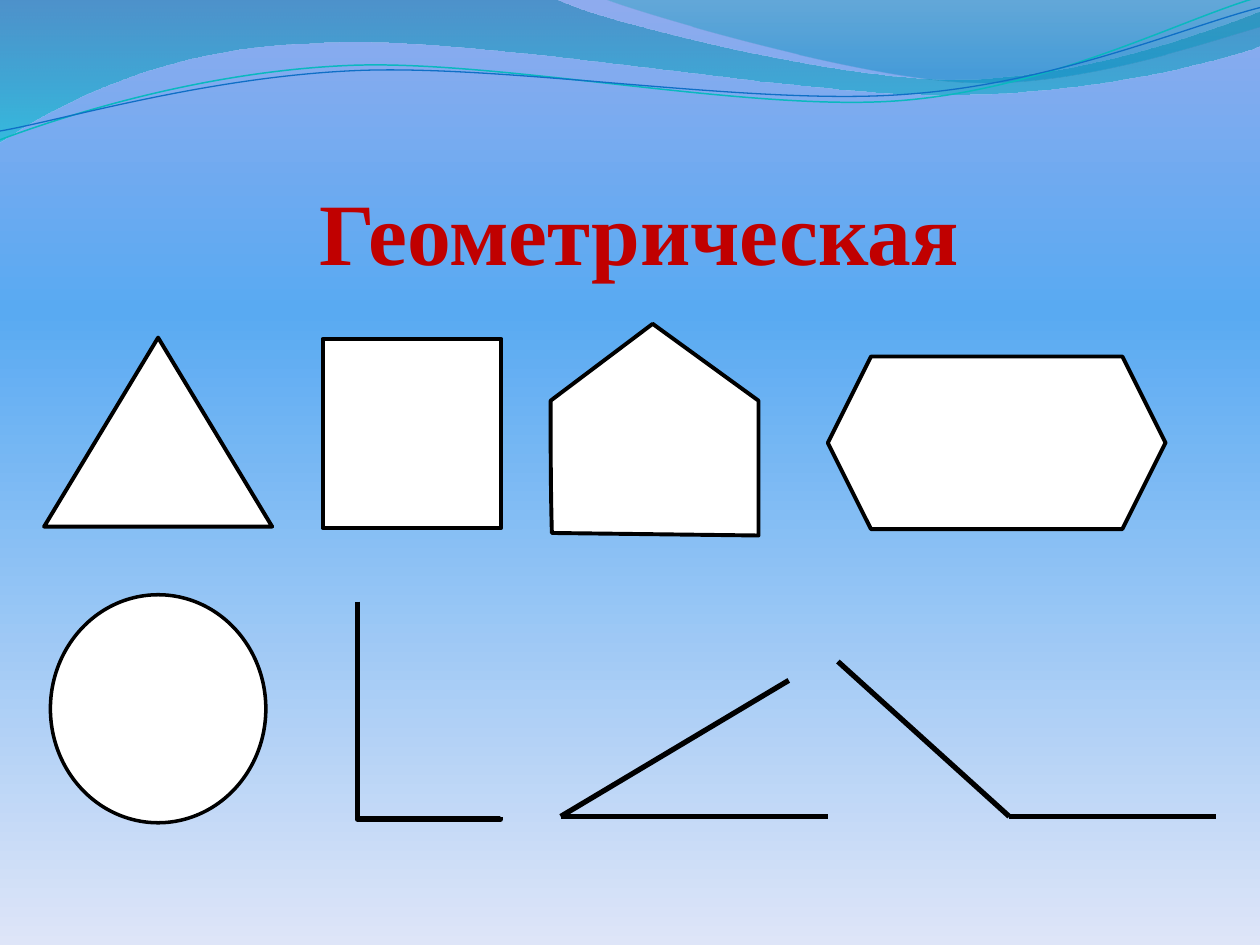
import math

from lxml import etree
from pptx import Presentation
from pptx.dml.color import RGBColor
from pptx.enum import shapes, text
from pptx.oxml.ns import qn
from pptx.util import Inches, Pt

BLACK = RGBColor(0x00, 0x00, 0x00)
WHITE = RGBColor(0xFF, 0xFF, 0xFF)
RED = RGBColor(0xC0, 0x00, 0x00)
TEAL = RGBColor(0x0A, 0xB8, 0xBF)
BLUE = RGBColor(0x0F, 0x6F, 0xC6)

TITLE = "Геометрическая"

# Gradient stops: position %, colour, opacity %
SKY = [(0, RGBColor(0x8E, 0xAB, 0xEE), 100),
       (33, RGBColor(0x59, 0xAA, 0xF2), 100),
       (100, RGBColor(0xDE, 0xE5, 0xF8), 100)]
WIDE_BAND = [(0, RGBColor(0x00, 0x74, 0xA1), 45),
             (100, RGBColor(0x00, 0xC6, 0xCF), 55)]
RIGHT_BAND = [(0, RGBColor(0x00, 0xA1, 0xA9), 30),
              (80, RGBColor(0x00, 0x8B, 0xBF), 45)]

# Box, then outline: a start point, then (x, y) for a line
# or six numbers for a Bezier curve
BANDS = [
    (WIDE_BAND, (-0.01, -0.01, 10.02, 1.14),
     [(0, 0), (4.4, -0.01),
      (4.76, 0.17, 6.64, 0.63, 7.58, 0.63),
      (8.53, 0.63, 9.58, 0.26, 10, 0.09),
      (10.01, 0.36),
      (9.83, 0.44, 8.7, 0.76, 7.46, 0.75),
      (6.22, 0.75, 3.82, 0.28, 2.57, 0.34),
      (1.29, 0.36, 0.46, 0.83, -0.01, 1.13)]),
    (RIGHT_BAND, (4.79, -0.01, 5.21, 0.7),
     [(4.79, -0.01),
      (5.09, 0.11, 6.82, 0.62, 7.69, 0.65),
      (8.56, 0.69, 9.61, 0.32, 10, 0.21),
      (10, 0)]),
]
WAVE_TILT = -2.7
WAVES = [
    (TEAL, 0.85, (-0.02, 0.22, 10.02, 0.71),
     [(0, 1.11),
      (0.48, 0.93, 1.58, 0.57, 2.77, 0.52),
      (3.95, 0.47, 5.93, 0.89, 7.13, 0.8),
      (8.33, 0.71, 9.38, 0.15, 9.98, -0.02)]),
    (BLUE, 0.75, (-0.02, 0.3, 10.03, 0.58),
     [(0, 1.04),
      (0.47, 0.96, 1.64, 0.61, 2.83, 0.56),
      (4.03, 0.51, 5.97, 0.84, 7.17, 0.75),
      (8.36, 0.67, 9.41, 0.21, 10, 0.06)]),
]
HOUSE_BOX = (4.37, 2.57, 1.65, 1.68)
HOUSE = [(4.37, 3.18), (5.18, 2.57), (6.02, 3.18),
         (6.02, 3.54, 6.02, 3.89, 6.02, 4.25), (4.38, 4.23),
         (4.37, 3.88, 4.37, 3.53, 4.37, 3.18)]

KIND = shapes.MSO_SHAPE
TRIANGLE = (KIND.ISOSCELES_TRIANGLE, (0.35, 2.68, 1.81, 1.5), 2.25)
SQUARE = (KIND.RECTANGLE, (2.56, 2.69, 1.42, 1.5), 2.25)
CIRCLE = (KIND.OVAL, (0.4, 4.72, 1.71, 1.81), 2)
HEXAGON = (KIND.HEXAGON, (6.57, 2.83, 2.68, 1.37), 2.25)

# Start and end of each ray of the acute and the obtuse angle
RAYS = [
    ((4.45, 6.48), (6.26, 5.4)), ((4.45, 6.48), (6.57, 6.48)),
    ((6.65, 5.25), (8.01, 6.48)), ((8.01, 6.48), (9.65, 6.48)),
]


def turn(point, center, degrees):
    dx, dy = point[0] - center[0], point[1] - center[1]
    cos, sin = math.cos(math.radians(degrees)), math.sin(math.radians(degrees))
    return center[0] + dx * cos - dy * sin, center[1] + dx * sin + dy * cos


def add_outline(slide, box, outline, close=True, tilt=0):
    """Draw lines and curves; the outline is given as seen after the tilt."""
    left, top, width, height = box
    center = (left + width / 2, top + height / 2)
    steps = [[turn(step[i:i + 2], center, -tilt) for i in range(0, len(step), 2)]
             for step in outline]
    anchors = [tuple(map(Inches, step[-1])) for step in steps]
    builder = slide.shapes.build_freeform(*anchors[0])
    builder.add_line_segments(anchors[1:], close=close)
    shape = builder.convert_to_shape()
    shape.left, shape.top, shape.width, shape.height = map(Inches, box)
    shape.rotation = tilt
    shape.shadow.inherit = False

    path = shape.element.find(".//" + qn("a:path"))
    path.set("w", str(shape.width))
    path.set("h", str(shape.height))
    segments = path.findall(qn("a:moveTo")) + path.findall(qn("a:lnTo"))
    for segment, step in zip(segments, steps):
        if len(step) == 3:
            curve = etree.Element(qn("a:cubicBezTo"))
            path.replace(segment, curve)
            segment = curve
        for point in list(segment):
            segment.remove(point)
        for x, y in step:
            etree.SubElement(segment, qn("a:pt"),
                             x=str(Inches(x - left)), y=str(Inches(y - top)))
    return shape


def paint_gradient(fill, owner, stops):
    """Fill from top to bottom; owner is the element that holds the fill."""
    fill.gradient()
    gradient = owner.find(".//" + qn("a:gradFill"))
    stop_list = gradient.find(qn("a:gsLst"))
    for old_stop in list(stop_list):
        stop_list.remove(old_stop)
    for position, color, opacity in stops:
        stop = etree.SubElement(stop_list, qn("a:gs"), pos=str(position * 1000))
        srgb = etree.SubElement(stop, qn("a:srgbClr"), val=str(color))
        if opacity < 100:
            etree.SubElement(srgb, qn("a:alpha"), val=str(opacity * 1000))
    gradient.find(qn("a:lin")).set("ang", str(90 * 60000))


def style_line(line, color, width):
    line.color.rgb = color
    line.width = Pt(width)


def style_figure(shape, width):
    shape.shadow.inherit = False
    shape.fill.solid()
    shape.fill.fore_color.rgb = WHITE
    style_line(shape.line, BLACK, width)


def add_figure(slide, kind, place, width):
    style_figure(slide.shapes.add_shape(kind, *map(Inches, place)), width)


def add_ray(slide, kind, start, end):
    ray = slide.shapes.add_connector(kind, *map(Inches, start + end))
    style_line(ray.line, BLACK, 3)
    etree.SubElement(ray._element.spPr, qn("a:effectLst"))
    return ray


def add_right_angle(slide):
    """An elbow turned by 270 degrees, its bend just past the far end."""
    elbow = add_ray(slide, shapes.MSO_CONNECTOR.ELBOW, (4.26, 5.06), (2.55, 6.2))
    properties = elbow._element.spPr
    properties.find(qn("a:xfrm")).set("rot", str(270 * 60000))
    geometry = properties.find(qn("a:prstGeom"))
    adjustments = geometry.find(qn("a:avLst"))
    if adjustments is None:
        adjustments = etree.SubElement(geometry, qn("a:avLst"))
    etree.SubElement(adjustments, qn("a:gd"), name="adj1", fmla="val 100900")


def add_title(slide):
    box = slide.shapes.add_textbox(*map(Inches, (1.06, 0.52, 8.03, 1.73)))
    frame = box.text_frame
    frame.word_wrap = True
    frame.vertical_anchor = text.MSO_ANCHOR.BOTTOM
    frame.margin_left = frame.margin_right = frame.margin_bottom = 0
    frame.margin_top = Inches(0.05)
    paragraph = frame.paragraphs[0]
    paragraph.text = TITLE
    paragraph.alignment = text.PP_ALIGN.CENTER
    font = paragraph.font
    font.name, font.size, font.bold = "Times New Roman", Pt(50), True
    font.color.rgb = RED


def main():
    deck = Presentation()
    deck.slide_width, deck.slide_height = Inches(10), Inches(7.5)
    slide = deck.slides.add_slide(deck.slide_layouts[6])
    paint_gradient(slide.background.fill, slide.element, SKY)

    for stops, box, outline in BANDS:
        band = add_outline(slide, box, outline)
        paint_gradient(band.fill, band.element, stops)
        band.line.fill.background()
    for color, width, box, outline in WAVES:
        wave = add_outline(slide, box, outline, close=False, tilt=WAVE_TILT)
        wave.fill.background()
        style_line(wave.line, color, width)

    add_title(slide)
    add_figure(slide, *TRIANGLE)
    add_figure(slide, *SQUARE)
    style_figure(add_outline(slide, HOUSE_BOX, HOUSE), 2.25)
    add_figure(slide, *CIRCLE)
    add_right_angle(slide)
    for start, end in RAYS:
        add_ray(slide, shapes.MSO_CONNECTOR.STRAIGHT, start, end)
    add_figure(slide, *HEXAGON)
    deck.save("out.pptx")


if __name__ == "__main__":
    main()
